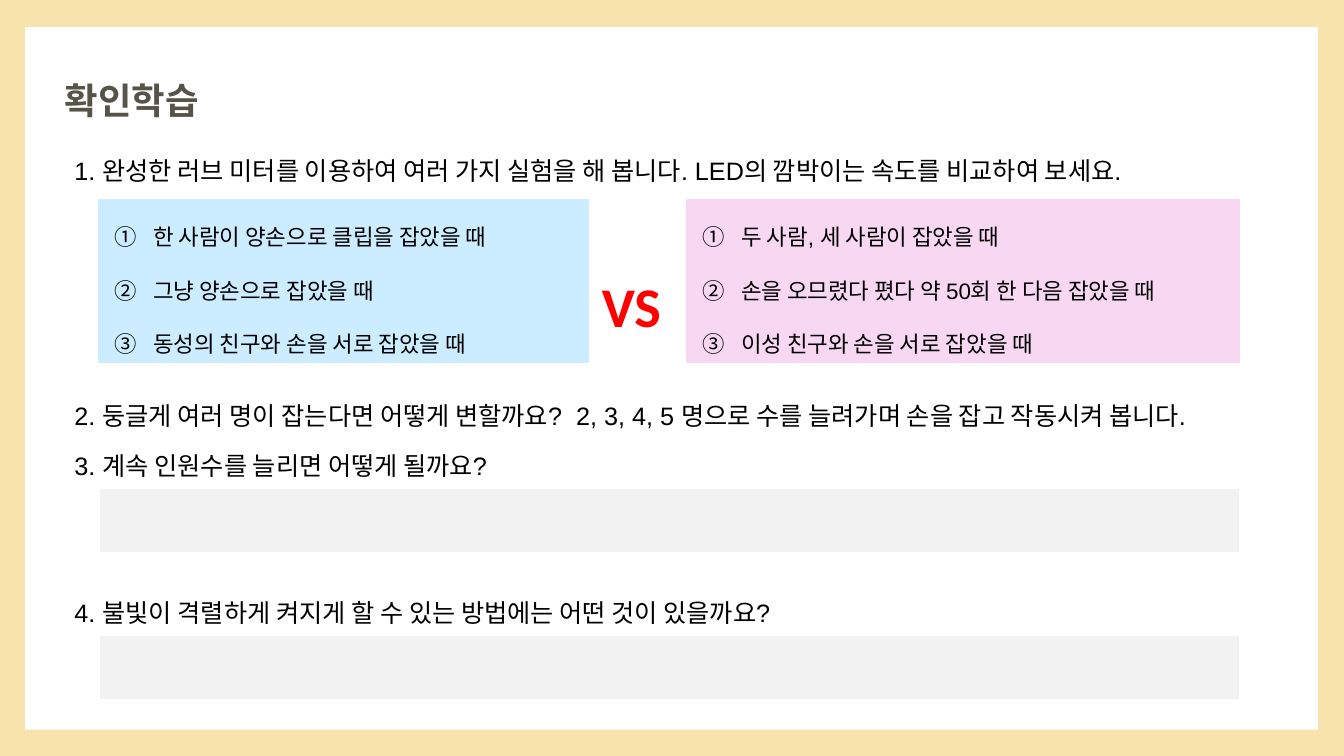
from dataclasses import dataclass

import lxml.etree
import pptx
import pptx.dml.color
import pptx.enum.shapes
import pptx.enum.text
import pptx.oxml.ns
import pptx.util

EMU_PER_PX = 9144  # 100 px to the inch
COLORS = {
    "frame": "F7E3AB", "white": "FFFFFF", "blue": "CCECFF", "pink": "F7D7F2",
    "answer": "F2F2F2", "title": "565349", "black": "000000", "red": "FF0000",
}
LIST_INDENT = 38
PANEL_TOP, PANEL_HEIGHT = 196, 165
ANSWER_TOPS = (484, 630)


@dataclass
class Panel:
    left: int
    width: int
    color: str
    items: tuple[str, ...]


@dataclass
class Question:
    top: int
    width: int
    text: str


PANELS = (
    Panel(96, 489, "blue", (
        "한 사람이 양손으로 클립을 잡았을 때",
        "그냥 양손으로 잡았을 때",
        "동성의 친구와 손을 서로 잡았을 때",
    )),
    Panel(679, 552, "pink", (
        "두 사람, 세 사람이 잡았을 때",
        "손을 오므렸다 폈다 약 50회 한 다음 잡았을 때",
        "이성 친구와 손을 서로 잡았을 때",
    )),
)
QUESTIONS = (
    Question(134, 1240, "1. 완성한 러브 미터를 이용하여 여러 가지 실험을 해 봅니다. LED의 깜박이는 속도를 비교하여 보세요."),
    Question(377, 1240, "2. 둥글게 여러 명이 잡는다면 어떻게 변할까요?  2, 3, 4, 5 명으로 수를 늘려가며 손을 잡고 작동시켜 봅니다."),
    Question(427, 972, "3. 계속 인원수를 늘리면 어떻게 될까요?"),
    Question(573, 972, "4. 불빛이 격렬하게 켜지게 할 수 있는 방법에는 어떤 것이 있을까요?"),
)


def px(n: int) -> pptx.util.Emu:
    return pptx.util.Emu(n * EMU_PER_PX)


def rgb(name: str) -> pptx.dml.color.RGBColor:
    return pptx.dml.color.RGBColor.from_string(COLORS[name])


def place(sp, left: int, top: int, width: int, height: int) -> None:
    sp.left, sp.top, sp.width, sp.height = map(px, (left, top, width, height))


def add_rect(s, left: int, top: int, width: int, height: int, color: str,
             outlined: bool = True) -> None:
    sp = s.shapes.add_shape(pptx.enum.shapes.MSO_SHAPE.RECTANGLE,
                            *map(px, (left, top, width, height)))
    sp.shadow.inherit = False
    sp.fill.solid()
    sp.fill.fore_color.rgb = rgb(color)
    if outlined:
        sp.line.color.rgb = rgb("white")
        sp.line.width = pptx.util.Pt(1.5)
    else:
        sp.line.fill.background()


def setup_frame(sp, inset: int | None = None, grow: bool = False) -> None:
    """Wrap the text from the top, with an equal inset on all sides if given."""
    tf = sp.text_frame
    tf.word_wrap = True
    tf.vertical_anchor = pptx.enum.text.MSO_ANCHOR.TOP
    sizes = pptx.enum.text.MSO_AUTO_SIZE
    tf.auto_size = sizes.SHAPE_TO_FIT_TEXT if grow else sizes.NONE
    if inset is not None:
        tf.margin_left = tf.margin_right = px(inset)
        tf.margin_top = tf.margin_bottom = px(inset)


def write(p, text: str, *, size: int, font: str = "Arial", color: str = "black",
          bold: bool = False, spacing: float = 1.0) -> None:
    p.alignment = pptx.enum.text.PP_ALIGN.LEFT
    p.line_spacing = spacing
    p.space_before = pptx.util.Pt(0)
    r = p.add_run()
    r.text = text
    r.font.size = pptx.util.Pt(size)
    r.font.name = font
    r.font.bold = bold
    r.font.color.rgb = rgb(color)


def number_circled(p) -> None:
    pPr = p._p.get_or_add_pPr()
    pPr.set("marL", str(px(LIST_INDENT)))
    pPr.set("indent", str(-px(LIST_INDENT)))
    for tag, attr, value in (("a:buFont", "typeface", "Arial"),
                             ("a:buAutoNum", "type", "circleNumDbPlain")):
        lxml.etree.SubElement(pPr, pptx.oxml.ns.qn(tag)).set(attr, value)


def add_panel(s, panel: Panel, body) -> None:
    add_rect(s, panel.left, PANEL_TOP, panel.width, PANEL_HEIGHT, panel.color)
    place(body, panel.left + 8, PANEL_TOP + 7, panel.width - 8, PANEL_HEIGHT - 7)
    setup_frame(body, grow=True)
    tf = body.text_frame
    for i, item in enumerate(panel.items):
        p = tf.add_paragraph() if i else tf.paragraphs[0]
        write(p, item, size=16, spacing=2.0 if i else 1.5)
        number_circled(p)
    bring_to_front(body)


def add_text(s, left: int, top: int, width: int, height: int):
    return s.shapes.add_textbox(*map(px, (left, top, width, height)))


def bring_to_front(sp) -> None:
    sp.element.getparent().append(sp.element)


def main() -> None:
    prs = pptx.Presentation()
    prs.slide_width, prs.slide_height = px(1333), px(750)
    s = prs.slides.add_slide(prs.slide_layouts.get_by_name("Two Content"))
    s.background.fill.solid()
    s.background.fill.fore_color.rgb = rgb("frame")
    title, *bodies = list(s.placeholders)

    add_rect(s, 25, 27, 1282, 697, "white", outlined=False)
    place(title, 54, 67, 280, 48)
    setup_frame(title, inset=10)
    write(title.text_frame.paragraphs[0], "확인학습", size=26, font="Calibri",
          color="title", bold=True)
    bring_to_front(title)

    for panel, body in zip(PANELS, bodies):
        add_panel(s, panel, body)
    versus = add_text(s, 587, 259, 91, 48)
    setup_frame(versus, inset=10)
    write(versus.text_frame.paragraphs[0], "VS", size=40, font="Calibri",
          color="red", bold=True)

    for top in ANSWER_TOPS:
        add_rect(s, 98, top, 1132, 65, "answer")
    for q in QUESTIONS:
        sp = add_text(s, 64, q.top, q.width, 56)
        setup_frame(sp, grow=True)
        write(sp.text_frame.paragraphs[0], q.text, size=18, spacing=1.5)

    prs.save("out.pptx")


if __name__ == "__main__":
    main()
